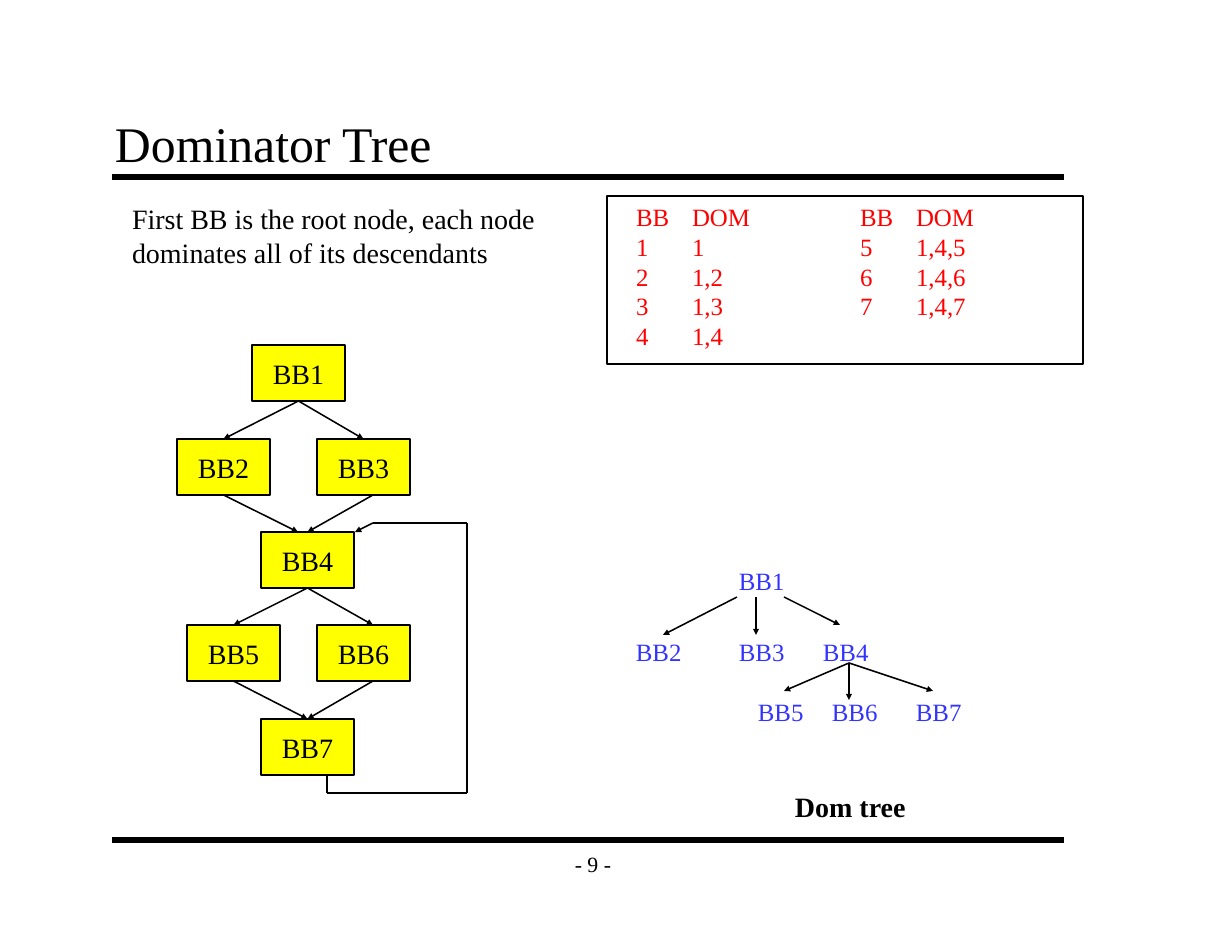
from dataclasses import dataclass

import lxml.etree
import pptx
import pptx.dml.color
import pptx.enum.shapes
import pptx.enum.text
import pptx.oxml.ns
import pptx.util

ALIGN = pptx.enum.text.PP_ALIGN
ANCHOR = pptx.enum.text.MSO_ANCHOR
AUTO = pptx.enum.text.MSO_AUTO_SIZE
SHAPE = pptx.enum.shapes.MSO_SHAPE
CONNECTOR = pptx.enum.shapes.MSO_CONNECTOR
EMU_PER_PX = 914400 / 112
BOTTOM, TOP = 2, 0


@dataclass(frozen=True)
class Theme:
    font: str = "Times New Roman"
    ink: str = "000000"
    node: str = "FFFF00"
    tree: str = "3333FF"
    dom: str = "FF0000"
    title_pt: int = 32
    body_pt: int = 18
    label_pt: int = 16
    footer_pt: int = 14
    rule_pt: int = 4
    line_pt: int = 1


THEME = Theme()


@dataclass(frozen=True)
class Label:
    lines: tuple[str, ...]
    x: int
    y: int
    w: int
    h: int
    size: int = THEME.body_pt
    color: str = THEME.ink
    bold: bool = False


@dataclass(frozen=True)
class Node:
    name: str
    x: int
    y: int
    w: int = 93
    h: int = 56


@dataclass(frozen=True)
class Edge:
    src: str
    dst: str
    src_dx: int = 0
    dst_dx: int = 0


@dataclass(frozen=True)
class Line:
    x1: int
    y1: int
    x2: int
    y2: int
    arrow: bool = True
    width: int = THEME.line_pt


def px(n: float) -> int:
    return round(n * EMU_PER_PX)


def rgb(color: str):
    return pptx.dml.color.RGBColor.from_string(color)


def apply(obj, fmt: dict) -> None:
    for name, value in fmt.items():
        setattr(obj, name, value)


def write(tf, lines, size: int, color: str, align=ALIGN.LEFT, bold: bool = False) -> None:
    for i, text in enumerate(lines):
        p = tf.paragraphs[0] if i == 0 else tf.add_paragraph()
        p.alignment = align
        r = p.add_run()
        r.text = text
        apply(r.font, {"name": THEME.font, "size": pptx.util.Pt(size), "bold": bold})
        r.font.color.rgb = rgb(color)


def add_label(s, label: Label, align=ALIGN.LEFT, **fmt):
    sp = s.shapes.add_textbox(px(label.x), px(label.y), px(label.w), px(label.h))
    apply(sp.text_frame, {"word_wrap": False, "auto_size": AUTO.SHAPE_TO_FIT_TEXT} | fmt)
    write(sp.text_frame, label.lines, label.size, label.color, align, label.bold)


def add_box(s, x: int, y: int, w: int, h: int, fill: str | None = None):
    sp = s.shapes.add_shape(SHAPE.RECTANGLE, px(x), px(y), px(w), px(h))
    sp.shadow.inherit = False
    if fill:
        sp.fill.solid()
        sp.fill.fore_color.rgb = rgb(fill)
    else:
        sp.fill.background()
    sp.line.color.rgb = rgb(THEME.ink)
    sp.line.width = pptx.util.Pt(THEME.line_pt)
    return sp


def add_node(s, node: Node):
    sp = add_box(s, node.x, node.y, node.w, node.h, THEME.node)
    apply(sp.text_frame, {"word_wrap": False, "vertical_anchor": ANCHOR.MIDDLE})
    write(sp.text_frame, (node.name,), THEME.body_pt, THEME.ink, ALIGN.CENTER)
    return sp


def add_line(s, line: Line):
    cx = s.shapes.add_connector(CONNECTOR.STRAIGHT, px(line.x1), px(line.y1), px(line.x2), px(line.y2))
    cx.line.color.rgb = rgb(THEME.ink)
    cx.line.width = pptx.util.Pt(line.width)
    if line.arrow:
        ln = cx.line._get_or_add_ln()
        lxml.etree.SubElement(ln, pptx.oxml.ns.qn("a:tailEnd"), type="triangle", w="sm", len="sm")
    lxml.etree.SubElement(cx._element.spPr, pptx.oxml.ns.qn("a:effectLst"))
    return cx


def add_edge(s, edge: Edge, nodes: dict, shapes: dict) -> None:
    a, b = nodes[edge.src], nodes[edge.dst]
    cx = add_line(s, Line(a.x + a.w // 2 + edge.src_dx, a.y + a.h, b.x + b.w // 2 + edge.dst_dx, b.y))
    if not edge.src_dx:
        cx.begin_connect(shapes[edge.src], BOTTOM)
    if not edge.dst_dx:
        cx.end_connect(shapes[edge.dst], TOP)


NODES = [
    Node("BB1", 252, 345), Node("BB2", 177, 439), Node("BB3", 317, 439), Node("BB4", 261, 532),
    Node("BB5", 187, 625), Node("BB6", 317, 625), Node("BB7", 261, 719),
]
EDGES = [
    Edge("BB1", "BB2"), Edge("BB1", "BB3"), Edge("BB2", "BB4", dst_dx=-9), Edge("BB3", "BB4", src_dx=10),
    Edge("BB4", "BB5"), Edge("BB4", "BB6", dst_dx=10), Edge("BB5", "BB7"), Edge("BB6", "BB7", src_dx=10),
]
BACK_EDGE = [(327, 775), (327, 793), (467, 793), (467, 523), (373, 523), (355, 532)]
TREE_LABELS = [
    ("BB1", 728, 560), ("BB2", 625, 631), ("BB3", 728, 631), ("BB4", 812, 631),
    ("BB5", 747, 691), ("BB6", 821, 691), ("BB7", 905, 691),
]
TREE_LINES = [
    Line(737, 597, 663, 635), Line(756, 597, 756, 635), Line(784, 597, 840, 625),
    Line(849, 663, 784, 691), Line(849, 663, 849, 700), Line(849, 663, 933, 691),
]
DOM_COLUMNS = [
    Label(("BB\tDOM", "1\t1", "2\t1,2", "3\t1,3", "4\t1,4"), 625, 196, 193, 161, THEME.label_pt, THEME.dom),
    Label(("BB\tDOM", "5\t1,4,5", "6\t1,4,6", "7\t1,4,7"), 849, 196, 193, 131, THEME.label_pt, THEME.dom),
]
CAPTIONS = [
    Label(("First BB is the root node, each node", "dominates all of its descendants"), 121, 196, 426, 78),
    Label(("Dom tree",), 784, 784, 133, 45, bold=True),
]
TITLE = Label(("Dominator Tree",), 103, 103, 952, 75, THEME.title_pt)
FOOTER = Label(("- 9 -",), 551, 840, 84, 47, THEME.footer_pt)


def main() -> None:
    prs = pptx.Presentation()
    apply(prs, {"slide_width": px(1232), "slide_height": px(952)})
    s = prs.slides.add_slide(prs.slide_layouts[6])

    for y in (177, 840):
        add_line(s, Line(112, y, 1064, y, arrow=False, width=THEME.rule_pt))
    margins = {"margin_left": px(12), "margin_right": px(12), "margin_top": px(6), "margin_bottom": px(6)}
    add_label(s, FOOTER, ALIGN.CENTER, auto_size=AUTO.NONE, vertical_anchor=ANCHOR.MIDDLE, **margins)
    add_label(s, TITLE, word_wrap=True, auto_size=AUTO.NONE, vertical_anchor=ANCHOR.BOTTOM, **margins)

    tree = [Label((name,), x, y, 68, 41, THEME.label_pt, THEME.tree) for name, x, y in TREE_LABELS]
    for label in tree + DOM_COLUMNS + CAPTIONS:
        add_label(s, label)
    add_box(s, 607, 196, 476, 168)

    nodes = {node.name: node for node in NODES}
    shapes = {node.name: add_node(s, node) for node in NODES}
    for edge in EDGES:
        add_edge(s, edge, nodes, shapes)
    last = len(BACK_EDGE) - 2
    for i, (a, b) in enumerate(zip(BACK_EDGE, BACK_EDGE[1:])):
        add_line(s, Line(*a, *b, arrow=i == last))
    for line in TREE_LINES:
        add_line(s, line)

    prs.save("out.pptx")


if __name__ == "__main__":
    main()
